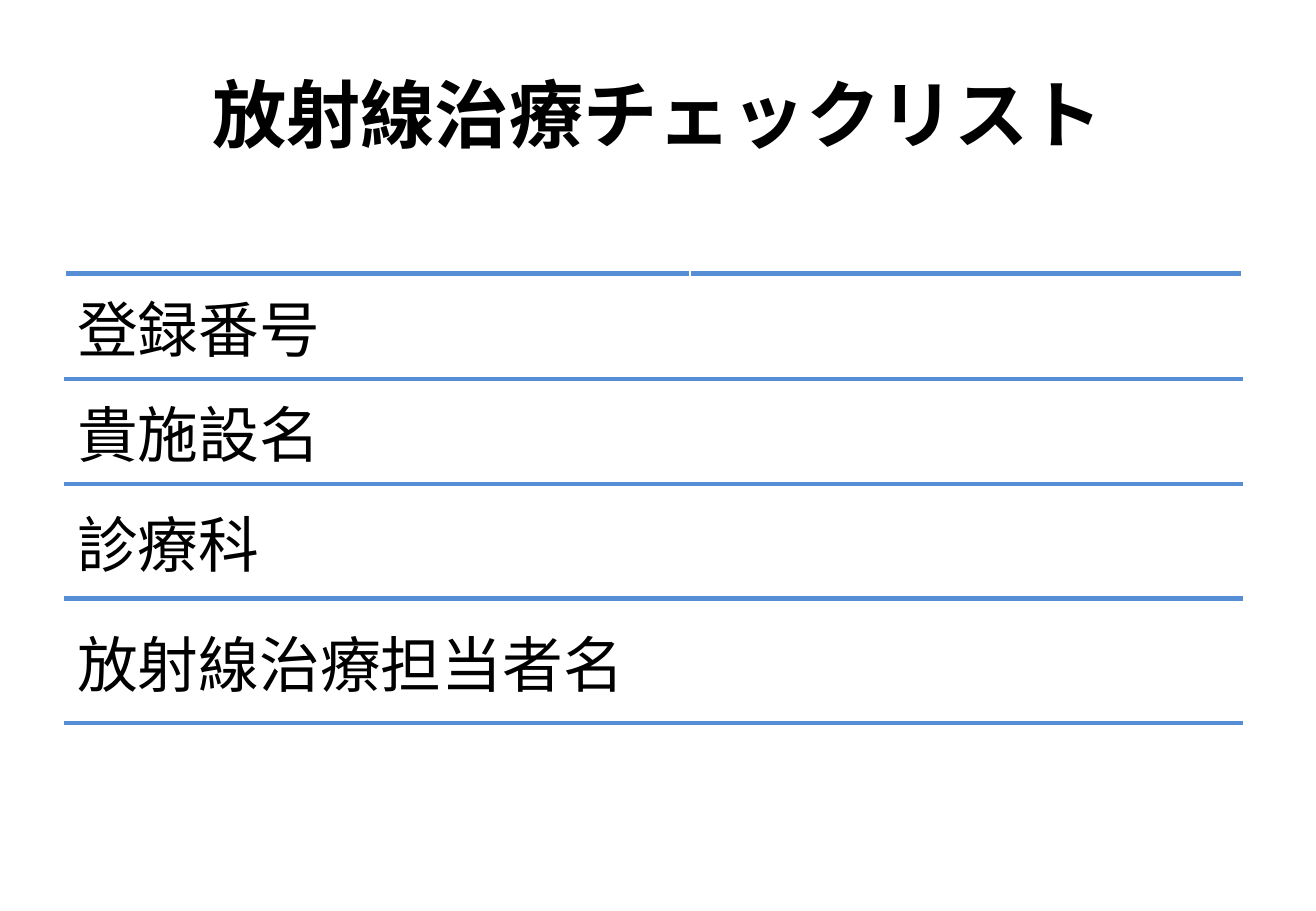
from dataclasses import dataclass

from lxml.etree import fromstring
from pptx import Presentation
from pptx.dml.color import RGBColor as RGB
from pptx.enum.text import MSO_ANCHOR as Anchor, PP_ALIGN as Align
from pptx.util import Cm, Pt

NS = "http://schemas.openxmlformats.org/drawingml/2006/main"


@dataclass(frozen=True)
class Theme:
    """Colours, fonts and sizes of the form."""
    ink: str = "000000"
    rule: str = "558ED5"
    rule_pt: int = 3
    head_font: str = "Arial"
    body_font: str = "Calibri"
    head_pt: int = 44
    body_pt: int = 36


class Form:
    """Draws the checklist's parts on one slide."""

    def __init__(self, slide, theme):
        self.slide = slide
        self.theme = theme

    def style(self, para, name, size, bold=False):
        """Set the font of a paragraph."""
        font = para.font
        font.name, font.size, font.bold = name, Pt(size), bold
        font.color.rgb = RGB.from_string(self.theme.ink)

    def title(self, text, left, top, width, height):
        """Add the centred heading."""
        box = self.slide.shapes.add_textbox(Cm(left), Cm(top), Cm(width), Cm(height))
        frame = box.text_frame
        frame.word_wrap = True
        frame.vertical_anchor = Anchor.MIDDLE
        para = frame.paragraphs[0]
        para.text = text
        para.alignment = Align.CENTER
        self.style(para, self.theme.head_font, self.theme.head_pt, True)

    def border(self, cell):
        """Rule a cell above and below."""
        props = cell._tc.get_or_add_tcPr()
        for spot, tag in enumerate(("lnT", "lnB")):
            props.insert(spot, fromstring(
                f'<a:{tag} xmlns:a="{NS}" w="{Pt(self.theme.rule_pt)}"><a:solidFill>'
                f'<a:srgbClr val="{self.theme.rule}"/></a:solidFill></a:{tag}>'))

    def table(self, rows, left, top, widths):
        """Add a ruled table with a label and an entry space in each row."""
        high = sum(height for _, height in rows)
        grid = self.slide.shapes.add_table(
            len(rows), len(widths), Cm(left), Cm(top), Cm(sum(widths)), Cm(high)).table
        grid.first_row = grid.horz_banding = False
        for col, width in zip(grid.columns, widths):
            col.width = Cm(width)
        for row, (label, height) in zip(grid.rows, rows):
            row.height = Cm(height)
            row.cells[0].text = label
            for cell in row.cells:
                cell.vertical_anchor = Anchor.MIDDLE
                cell.fill.background()
                self.border(cell)
                self.style(cell.text_frame.paragraphs[0],
                           self.theme.body_font, self.theme.body_pt)


def main():
    """Build the checklist cover and save it."""
    deck = Presentation()
    deck.slide_width, deck.slide_height = Cm(27.51), Cm(19.05)
    form = Form(deck.slides.add_slide(deck.slide_layouts[6]), Theme())
    form.title("放射線治療チェックリスト", 1.38, 0.76, 24.76, 3.18)
    rows = [("登録番号", 2.2), ("貴施設名", 2.2),
            ("診療科", 2.4), ("放射線治療担当者名", 2.6)]
    form.table(rows, 1.36, 5.72, (13.06, 11.54))
    deck.save("out.pptx")


if __name__ == "__main__":
    main()
